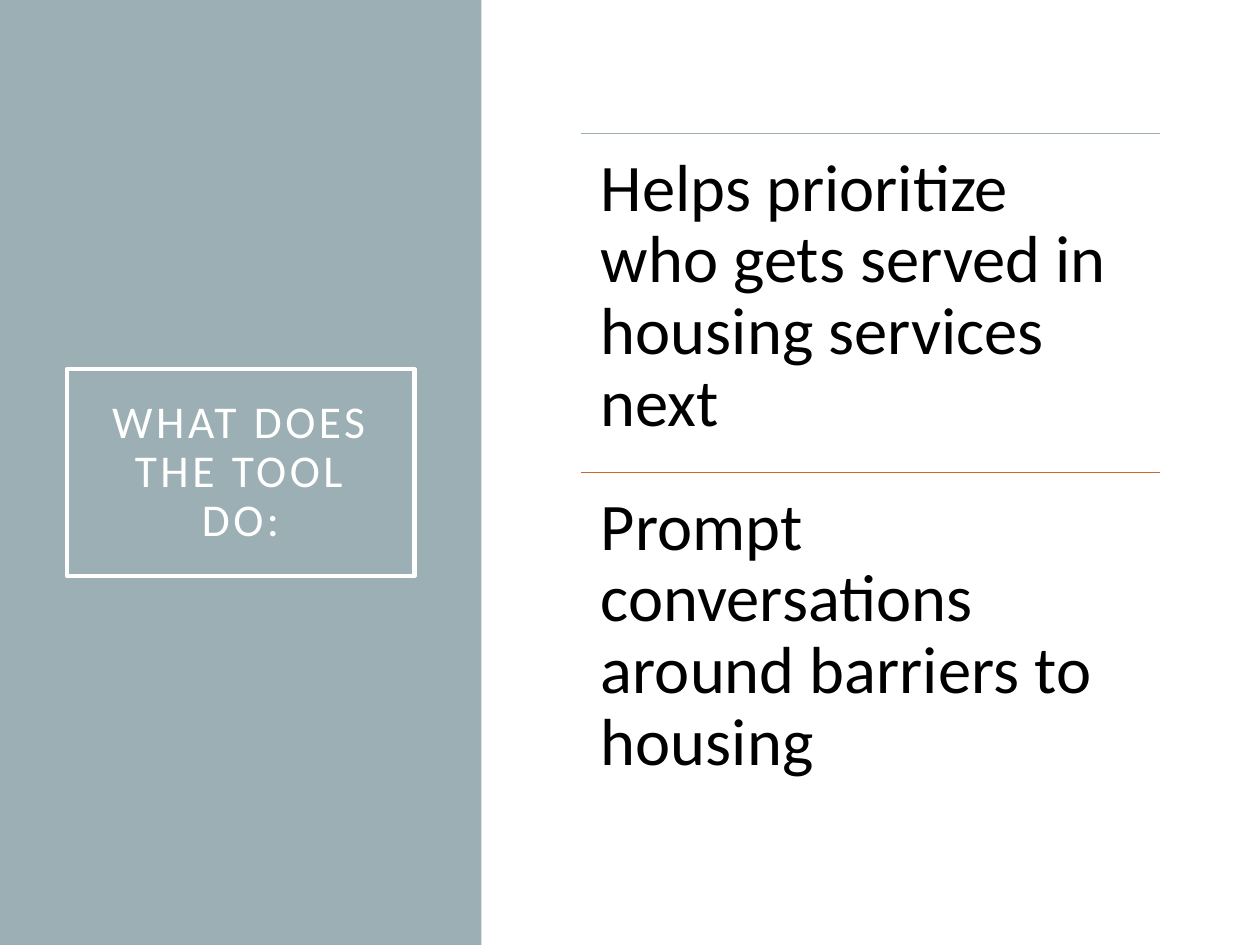
from pptx import Presentation
from pptx.dml.color import RGBColor
from pptx.enum.shapes import MSO_CONNECTOR, MSO_SHAPE
from pptx.enum.text import MSO_ANCHOR, MSO_AUTO_SIZE, PP_ALIGN
from pptx.oxml.ns import qn
from pptx.util import Inches, Pt
from lxml.etree import SubElement

WHITE = RGBColor(0xFF, 0xFF, 0xFF)
BLACK = RGBColor(0x00, 0x00, 0x00)
SLATE = RGBColor(0x9B, 0xAF, 0xB5)
RUST = RGBColor(0xC9, 0x67, 0x31)
FONT = "Calibri"

TITLE = "WHAT DOES THE TOOL DO:"
PURPOSES = [
    ("Helps prioritize who gets served in housing services next", SLATE),
    ("Prompt conversations around barriers to housing", RUST),
]

WIDTH, HEIGHT = Inches(10), Inches(7.5)
PANEL_WIDTH = Inches(3.82)
LIST_LEFT, LIST_TOP = Inches(4.61), Inches(1.06)
LIST_WIDTH, ROW_HEIGHT = Inches(4.6), Inches(2.69)


def write_text(shape, text, size, color, inset, anchor, alignment):
    frame = shape.text_frame
    frame.word_wrap = True
    frame.auto_size = MSO_AUTO_SIZE.NONE
    frame.vertical_anchor = anchor
    frame.margin_left = frame.margin_right = Inches(inset)
    frame.margin_top = frame.margin_bottom = Inches(inset)
    paragraph = frame.paragraphs[0]
    paragraph.alignment = alignment
    paragraph.line_spacing = 0.9
    run = paragraph.add_run()
    run.text = text
    run.font.name = FONT
    run.font.size = Pt(size)
    run.font.color.rgb = color
    return run


def add_rule(slide, top, color):
    rule = slide.shapes.add_connector(
        MSO_CONNECTOR.STRAIGHT, LIST_LEFT, top, LIST_LEFT + LIST_WIDTH, top)
    rule.line.color.rgb = color
    rule.line.width = Pt(0.5)
    SubElement(rule.element.spPr, qn("a:effectLst"))


def main():
    presentation = Presentation()
    presentation.slide_width, presentation.slide_height = WIDTH, HEIGHT
    slide = presentation.slides.add_slide(presentation.slide_layouts[5])

    panel = slide.shapes.add_shape(MSO_SHAPE.RECTANGLE, 0, 0, PANEL_WIDTH, HEIGHT)
    panel.shadow.inherit = False
    panel.fill.solid()
    panel.fill.fore_color.rgb = SLATE
    panel.line.fill.background()

    title = slide.shapes.title
    title.element.addprevious(panel.element)
    title.left, title.top = Inches(0.53), Inches(2.93)
    title.width, title.height = Inches(2.76), Inches(1.64)
    title.line.color.rgb = WHITE
    title.line.width = Pt(2.5)
    run = write_text(title, TITLE, 26, WHITE, 0.2, MSO_ANCHOR.MIDDLE, PP_ALIGN.CENTER)
    run.font.element.set("spc", "200") if hasattr(run.font, "element") else \
        run._r.get_or_add_rPr().set("spc", "200")

    for row, (purpose, color) in enumerate(PURPOSES):
        top = LIST_TOP + row * ROW_HEIGHT
        add_rule(slide, top, color)
        box = slide.shapes.add_textbox(LIST_LEFT, top, LIST_WIDTH, ROW_HEIGHT)
        write_text(box, purpose, 38, BLACK, 0.16, MSO_ANCHOR.TOP, PP_ALIGN.LEFT)

    presentation.save("out.pptx")


if __name__ == "__main__":
    main()
